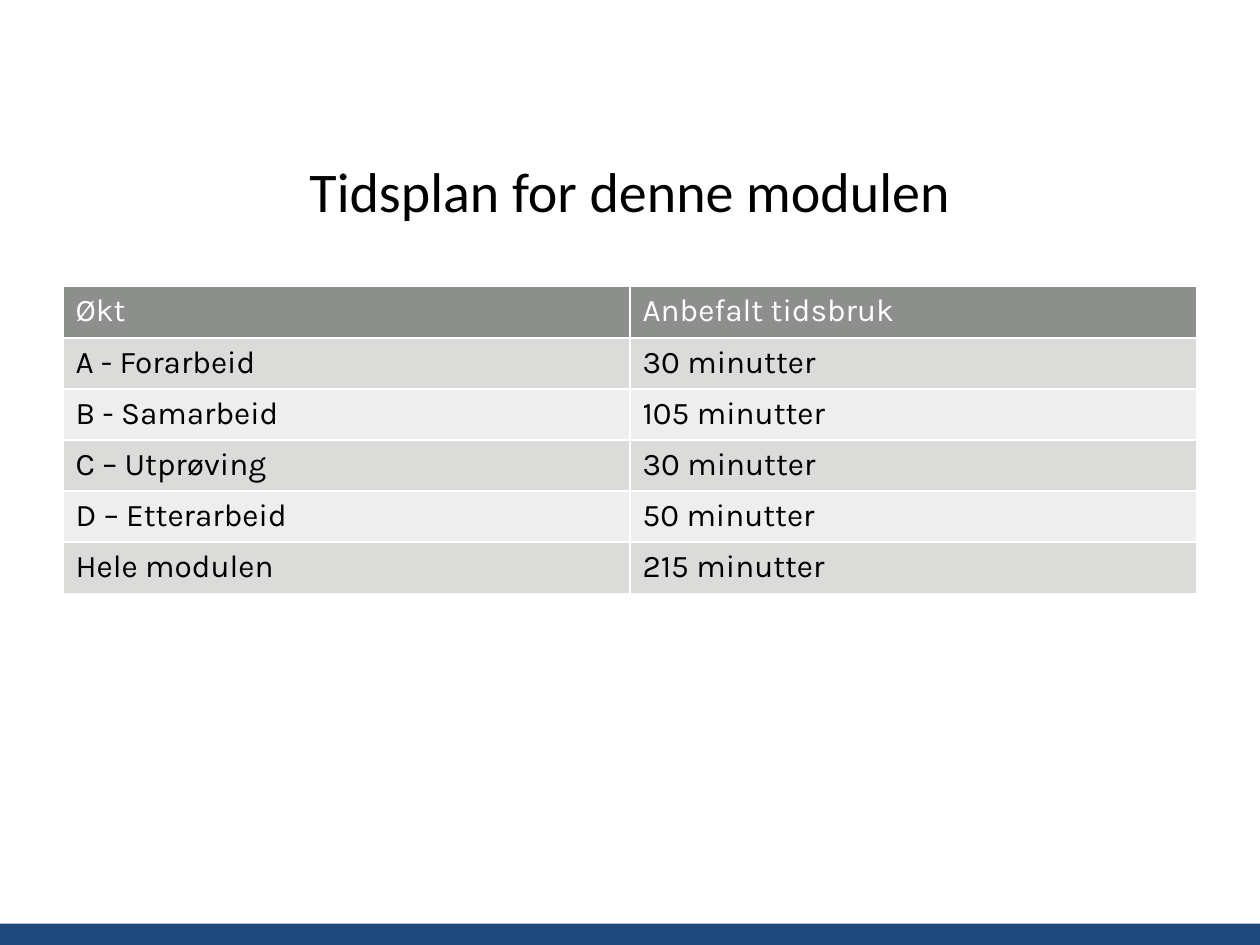
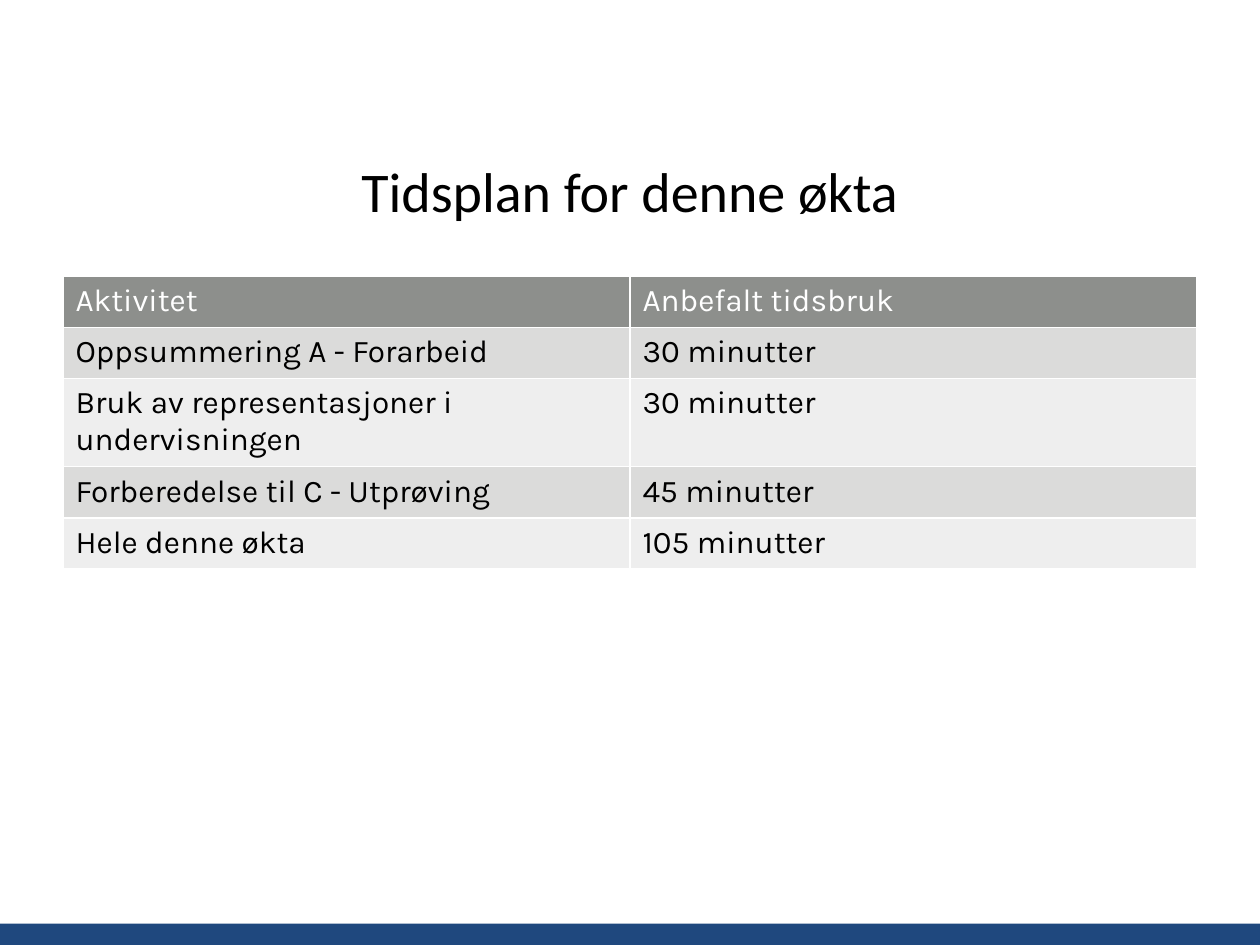
from dataclasses import dataclass

import pptx
import pptx.dml.color
import pptx.enum.shapes
import pptx.enum.text
import pptx.slide
import pptx.text.text
import pptx.util
from pptx.util import Cm

# Shared style
COLORS = {
    "band": "1F487E",
    "header": "8D8F8C",
    "odd_row": "DBDBDA",
    "even_row": "EEEEEE",
    "light_text": "FFFFFF",
    "dark_text": "000000",
}
TITLE_FONT, TABLE_FONT = "Calibri", "Karla"
SLIDE_WIDTH, SLIDE_HEIGHT = Cm(25.4), Cm(19.05)
MARGIN = Cm(1.27)
CONTENT_WIDTH = SLIDE_WIDTH - 2 * MARGIN
BAND_HEIGHT = Cm(0.43)
ROW_HEIGHT = Cm(1.03)


@dataclass
class Schedule:
    title: str
    table_top: float  # centimetres
    rows: list[tuple[str, str]]  # the first row is the header


SCHEDULES = [
    Schedule("Tidsplan for denne modulen", 5.78, [
        ("Økt", "Anbefalt tidsbruk"),
        ("A - Forarbeid", "30 minutter"),
        ("B - Samarbeid", "105 minutter"),
        ("C – Utprøving", "30 minutter"),
        ("D – Etterarbeid", "50 minutter"),
        ("Hele modulen", "215 minutter"),
    ]),
    Schedule("Tidsplan for denne økta", 5.57, [
        ("Aktivitet", "Anbefalt tidsbruk"),
        ("Oppsummering A - Forarbeid", "30 minutter"),
        ("Bruk av representasjoner i undervisningen", "30 minutter"),
        ("Forberedelse til C - Utprøving", "45 minutter"),
        ("Hele denne økta", "105 minutter"),
    ]),
]


def rgb(color: str) -> pptx.dml.color.RGBColor:
    return pptx.dml.color.RGBColor.from_string(COLORS[color])


def write(frame: pptx.text.text.TextFrame, text: str, font: str, size: int, color: str) -> None:
    frame.text = text
    run_font = frame.paragraphs[0].runs[0].font
    run_font.name = font
    run_font.size = pptx.util.Pt(size)
    run_font.bold = False
    run_font.color.rgb = rgb(color)


def add_band(slide: pptx.slide.Slide) -> None:
    band = slide.shapes.add_shape(
        pptx.enum.shapes.MSO_SHAPE.RECTANGLE,
        0, SLIDE_HEIGHT - BAND_HEIGHT, SLIDE_WIDTH, BAND_HEIGHT)
    band.shadow.inherit = False
    band.fill.solid()
    band.fill.fore_color.rgb = rgb("band")
    band.line.fill.background()


def add_title(slide: pptx.slide.Slide, text: str) -> None:
    title = slide.shapes.add_textbox(MARGIN, Cm(2.54), CONTENT_WIDTH, Cm(2.57)).text_frame
    title.word_wrap = True
    title.vertical_anchor = pptx.enum.text.MSO_ANCHOR.MIDDLE
    write(title, text, TITLE_FONT, 32, "dark_text")
    title.paragraphs[0].alignment = pptx.enum.text.PP_ALIGN.CENTER


def add_timetable(slide: pptx.slide.Slide, schedule: Schedule) -> None:
    # The default table style supplies the white cell borders
    row_count = len(schedule.rows)
    timetable = slide.shapes.add_table(
        row_count, 2, MARGIN, Cm(schedule.table_top),
        CONTENT_WIDTH, ROW_HEIGHT * row_count).table
    for row_index, entries in enumerate(schedule.rows):
        if row_index == 0:
            fill, ink = "header", "light_text"
        else:
            fill, ink = ("odd_row" if row_index % 2 else "even_row"), "dark_text"
        for column_index, entry in enumerate(entries):
            cell = timetable.cell(row_index, column_index)
            cell.fill.solid()
            cell.fill.fore_color.rgb = rgb(fill)
            write(cell.text_frame, entry, TABLE_FONT, 18, ink)


def main() -> None:
    deck = pptx.Presentation()
    deck.slide_width, deck.slide_height = SLIDE_WIDTH, SLIDE_HEIGHT
    for schedule in SCHEDULES:
        slide = deck.slides.add_slide(deck.slide_layouts[6])
        add_band(slide)
        add_title(slide, schedule.title)
        add_timetable(slide, schedule)
    deck.save("out.pptx")


if __name__ == "__main__":
    main()
